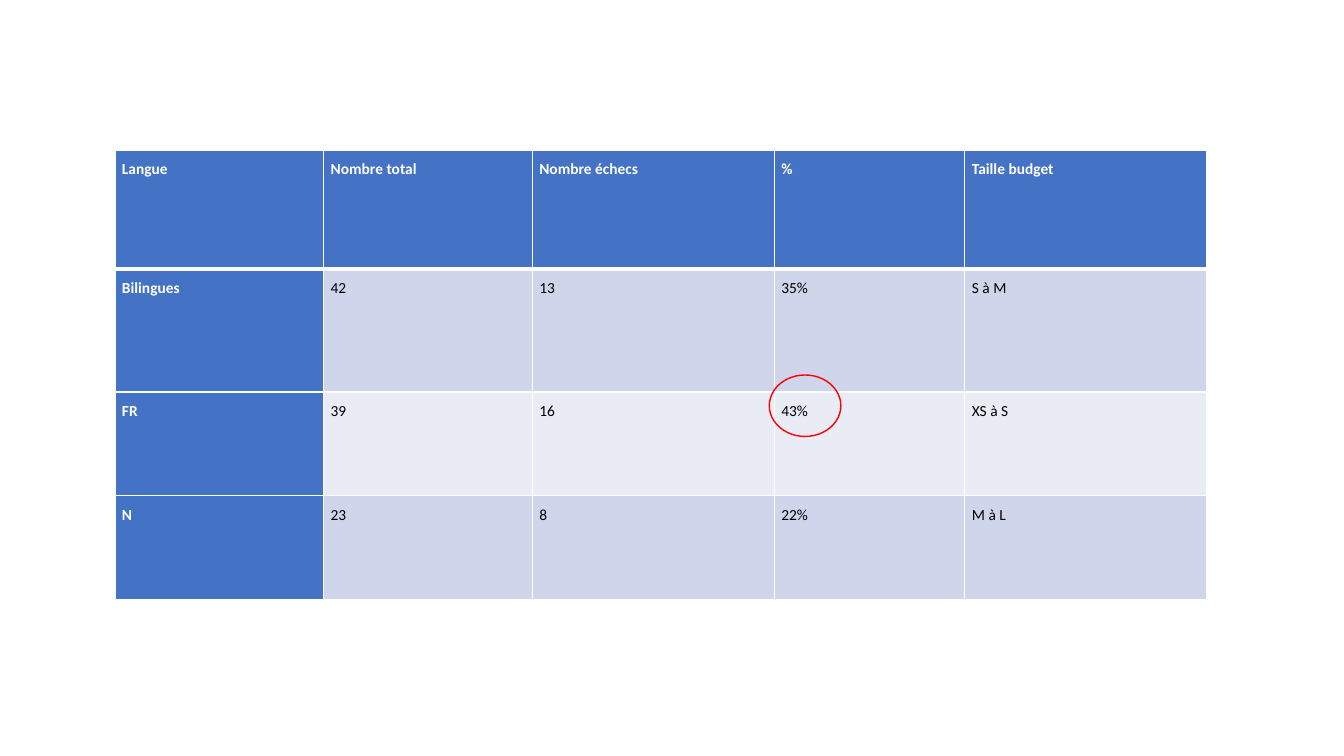
from lxml.etree import SubElement
from pptx import Presentation
from pptx.dml.color import RGBColor
from pptx.enum.shapes import MSO_SHAPE as Preset
from pptx.oxml.ns import qn
from pptx.util import Emu, Pt

EMU_PER_PX = 9144
BLUE, WHITE, BLACK, RED = "4472C4", "FFFFFF", "000000", "FF0000"
BANDS = ["CFD5EA", "E9EBF5"]

RESULTS = [
    ["Langue", "Nombre total", "Nombre échecs", "%", "Taille budget"],
    ["Bilingues", "42", "13", "35%", "S à M"],
    ["FR", "39", "16", "43%", "XS à S"],
    ["N", "23", "8", "22%", "M à L"],
]
COLUMN_WIDTHS = [207, 207, 240, 189, 240]
ROW_HEIGHTS = [118, 122, 103, 103]


def px(length):
    return Emu(length * EMU_PER_PX)


def color(value):
    return RGBColor.from_string(value)


class SlideBuilder:
    font_name = "Calibri"
    font_size = Pt(11)
    line_spacing = 1.5
    cell_margin = 7

    def __init__(self, deck):
        self.slide = deck.slides.add_slide(deck.slide_layouts[6])

    def table(self, left, top, widths, heights, rows):
        table = self.slide.shapes.add_table(
            len(rows), len(widths), px(left), px(top), px(sum(widths)), px(sum(heights))
        ).table
        table.first_col = True
        for column, width in zip(table.columns, widths):
            column.width = px(width)
        for row, height in zip(table.rows, heights):
            row.height = px(height)
        for r, values in enumerate(rows):
            for c, value in enumerate(values):
                heading = r == 0 or c == 0
                cell = table.cell(r, c)
                self.borders(cell, top=3 if r == 1 else 1, bottom=3 if r == 0 else 1)
                self.cell(cell, value, BLUE if heading else BANDS[(r - 1) % 2], heading)

    def cell(self, cell, value, fill, heading):
        cell.fill.solid()
        cell.fill.fore_color.rgb = color(fill)
        cell.margin_left = cell.margin_right = px(self.cell_margin)
        cell.margin_top = cell.margin_bottom = 0
        paragraph = cell.text_frame.paragraphs[0]
        paragraph.line_spacing = self.line_spacing
        run = paragraph.add_run()
        run.text = value
        run.font.name = self.font_name
        run.font.size = self.font_size
        run.font.bold = heading
        run.font.color.rgb = color(WHITE if heading else BLACK)

    def borders(self, cell, top, bottom):
        properties = cell._tc.get_or_add_tcPr()
        for side, width in (("L", 1), ("R", 1), ("T", top), ("B", bottom)):
            edge = SubElement(properties, qn(f"a:ln{side}"), w=str(Pt(width)))
            paint = SubElement(edge, qn("a:solidFill"))
            SubElement(paint, qn("a:srgbClr"), val=WHITE)

    def ring(self, left, top, width, height, outline):
        ring = self.slide.shapes.add_shape(
            Preset.OVAL, px(left), px(top), px(width), px(height)
        )
        ring.shadow.inherit = False
        ring.fill.background()
        ring.line.color.rgb = color(outline)
        ring.line.width = Pt(1)


def main():
    deck = Presentation()
    deck.slide_width, deck.slide_height = px(1333), px(750)
    builder = SlideBuilder(deck)
    builder.table(114, 149, COLUMN_WIDTHS, ROW_HEIGHTS, RESULTS)
    builder.ring(763, 372, 71, 61, RED)
    deck.save("out.pptx")


if __name__ == "__main__":
    main()
